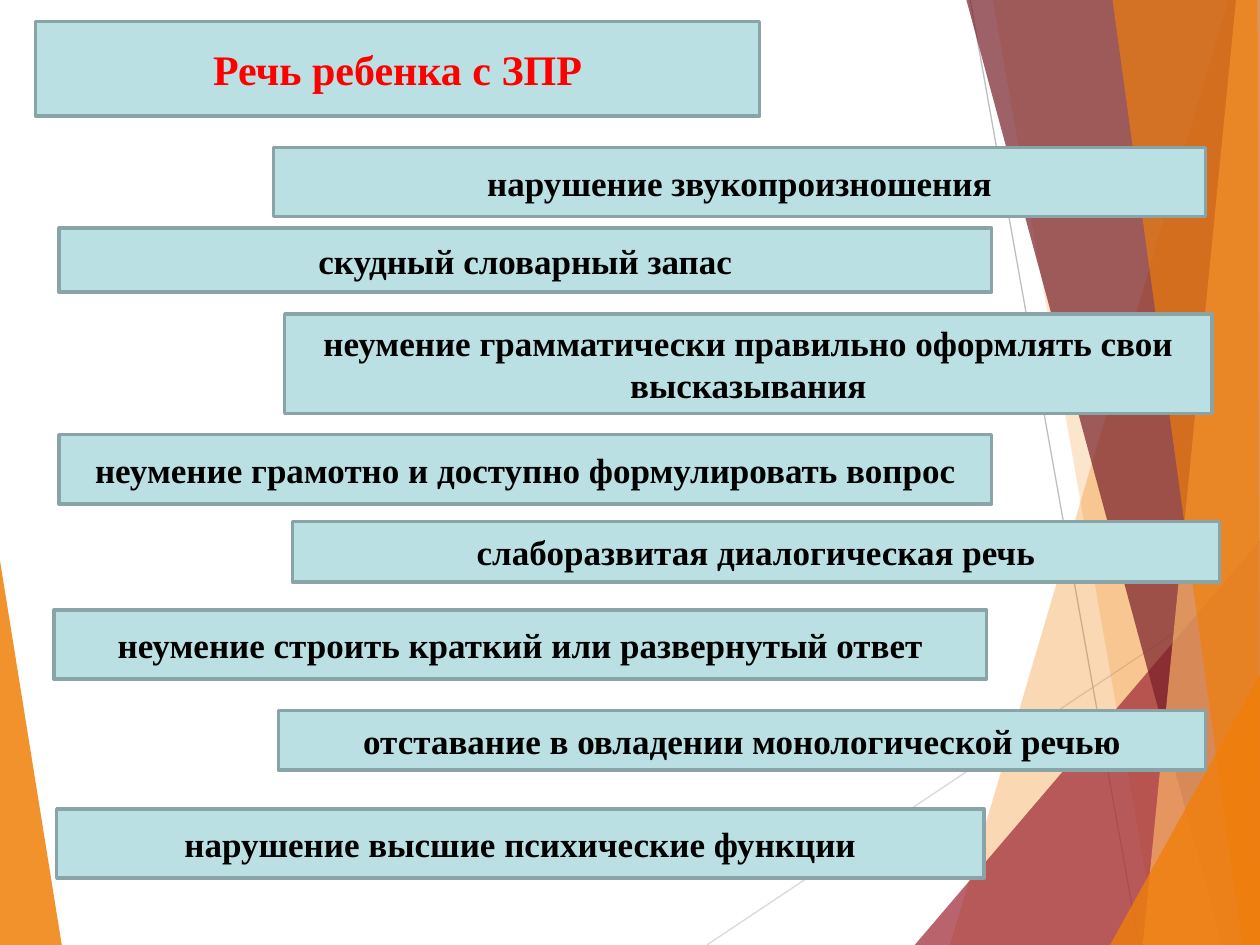
from lxml import etree
from pptx import Presentation
from pptx.dml.color import RGBColor
from pptx.enum.shapes import MSO_CONNECTOR, MSO_SHAPE
from pptx.enum.text import MSO_ANCHOR, PP_ALIGN
from pptx.oxml.ns import qn
from pptx.util import Inches, Pt

COLORS = {
    "orange": "F07F09", "peach": "F9B268", "red": "9F2936", "wine": "771F28",
    "pale": "D9D9D9", "gray": "BFBFBF", "box": "BBE0E3", "edge": "89A4A7",
    "title": "FF0000", "text": "000000",
}
W, H = 10, 7.5

# Colour, opacity in percent, corner points
WEDGE = ("orange", 85, [(0, 4.45), (0.49, H), (0, H)])
RAYS = [
    ("orange", 30, [(9.75, 0), (7.54, H), (W, H), (W, 0)]),
    ("orange", 20, [(7.88, 0), (9.19, H), (W, H), (W, 0)]),
    ("red", 72, [(7.26, H), (W, 4.29), (W, H)]),
    ("wine", 70, [(7.67, 0), (9.7, H), (W, H), (W, 0)]),
    ("peach", 70, [(9.81, 0), (9.07, H), (W, H), (W, 0)]),
    ("orange", 65, [(8.83, 0), (9.86, H), (W, H), (9.98, 0)]),
    ("orange", 80, [(8.81, H), (W, 5.35), (W, H)]),
]
LINES = [("pale", (5.61, H, W, 4.57)), ("gray", (7.7, 0, 9.04, H))]

TITLE = ("Речь ребенка с ЗПР", (0.28, 0.17, 5.75, 0.75))
SIGNS = [
    ("нарушение звукопроизношения", (2.17, 1.17, 7.4, 0.55)),
    ("скудный словарный запас", (0.47, 1.81, 7.4, 0.51)),
    ("неумение грамматически правильно оформлять свои высказывания",
     (2.26, 2.49, 7.36, 0.79)),
    ("неумение грамотно и доступно формулировать вопрос", (0.47, 3.45, 7.4, 0.55)),
    ("слаборазвитая диалогическая речь", (2.32, 4.14, 7.36, 0.48)),
    ("неумение строить краткий или развернутый ответ", (0.43, 4.84, 7.4, 0.55)),
    ("отставание в овладении монологической речью", (2.21, 5.64, 7.36, 0.47)),
    ("нарушение высшие психические функции", (0.45, 6.42, 7.36, 0.55)),
]


def color(name):
    return RGBColor.from_string(COLORS[name])


def paint(shape, name):
    shape.shadow.inherit = False
    shape.fill.solid()
    shape.fill.fore_color.rgb = color(name)


def add_ray(shapes, name, alpha, points):
    """Draw a see-through polygon without an outline."""
    start, *rest = [(Inches(x), Inches(y)) for x, y in points]
    pen = shapes.build_freeform(*start)
    pen.add_line_segments(rest, close=True)
    ray = pen.convert_to_shape()
    paint(ray, name)
    ray.line.fill.background()
    tint = ray.fill._xPr.find(".//" + qn("a:srgbClr"))
    etree.SubElement(tint, qn("a:alpha")).set("val", str(alpha * 1000))


def add_line(shapes, name, ends):
    line = shapes.add_connector(MSO_CONNECTOR.STRAIGHT, *map(Inches, ends))
    line.line.color.rgb = color(name)
    line.line.width = Pt(0.75)
    etree.SubElement(line._element.spPr, qn("a:effectLst"))


def add_box(shapes, text, place, size=20, tone="text"):
    box = shapes.add_shape(MSO_SHAPE.RECTANGLE, *map(Inches, place))
    paint(box, "box")
    box.line.color.rgb = color("edge")
    box.line.width = Pt(2)
    frame = box.text_frame
    frame.word_wrap = True
    frame.vertical_anchor = MSO_ANCHOR.MIDDLE
    para = frame.paragraphs[0]
    para.alignment = PP_ALIGN.CENTER
    run = para.add_run()
    run.text = text
    look = {"name": "Times New Roman", "size": Pt(size), "bold": True}
    for key, value in look.items():
        setattr(run.font, key, value)
    run.font.color.rgb = color(tone)


def main():
    deck = Presentation()
    deck.slide_width, deck.slide_height = Inches(W), Inches(H)
    shapes = deck.slides.add_slide(deck.slide_layouts[6]).shapes
    add_ray(shapes, *WEDGE)
    for line in LINES:
        add_line(shapes, *line)
    for ray in RAYS:
        add_ray(shapes, *ray)
    add_box(shapes, *TITLE, size=24, tone="title")
    for sign in SIGNS:
        add_box(shapes, *sign)
    deck.save("out.pptx")


if __name__ == "__main__":
    main()
